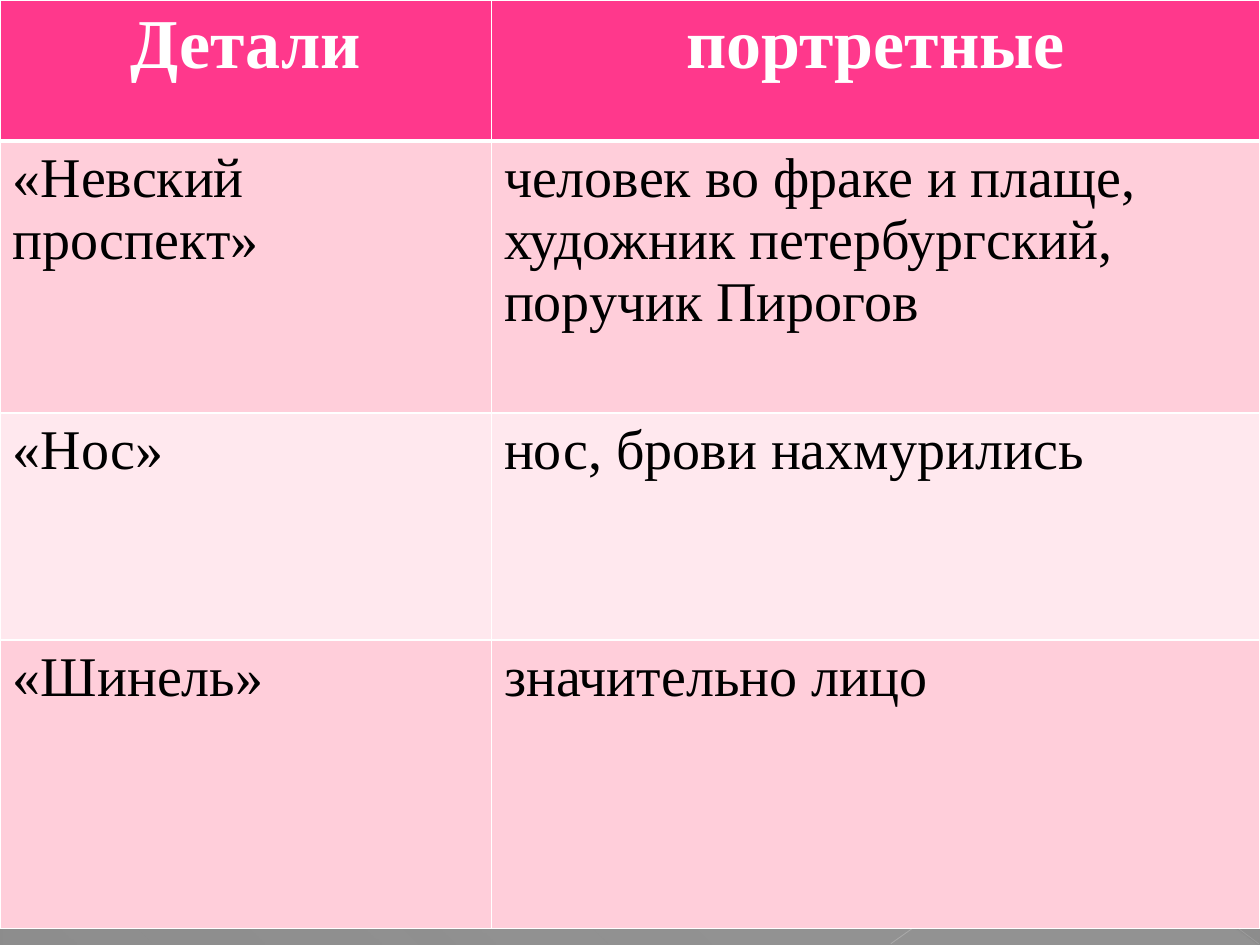
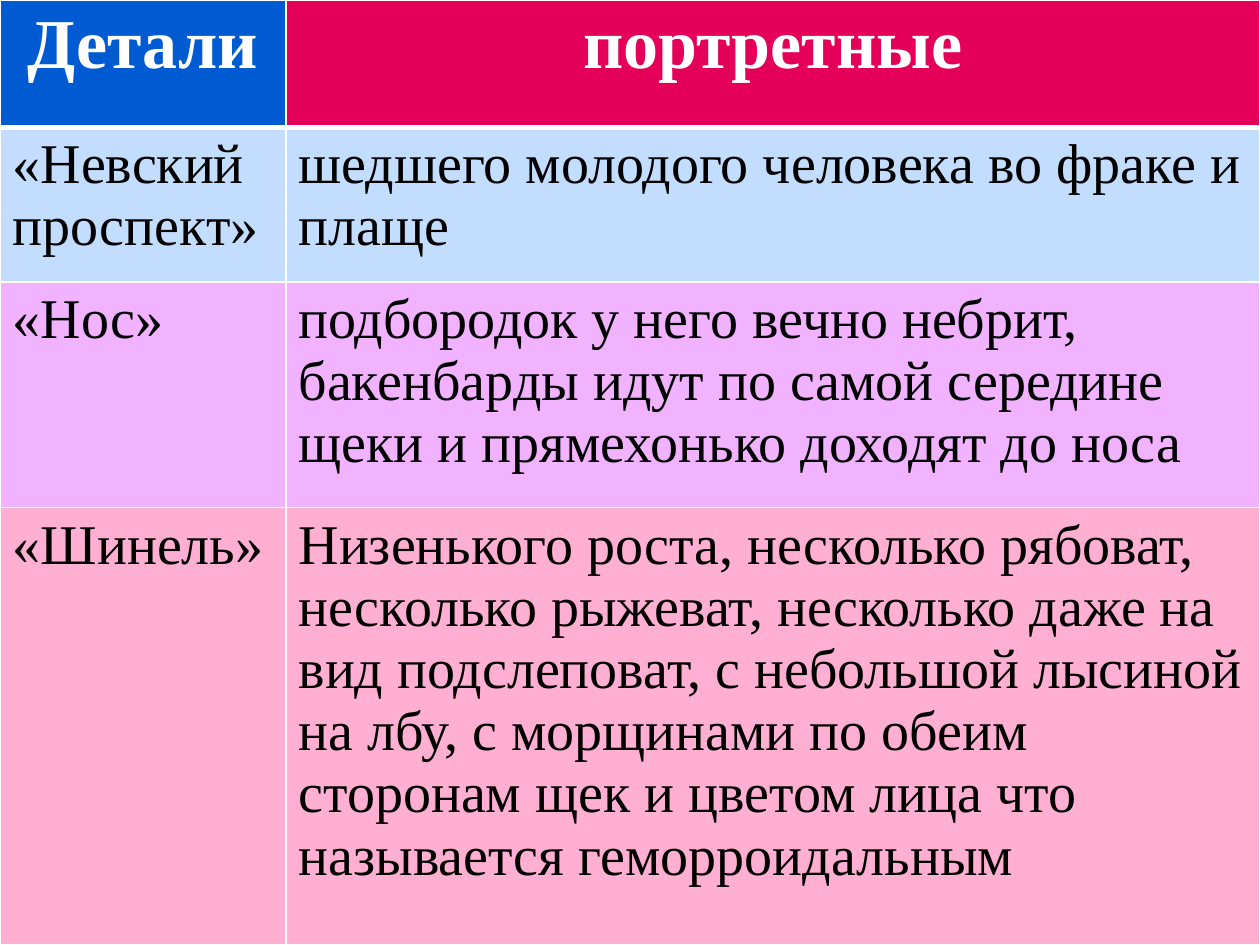
from dataclasses import dataclass

from pptx import Presentation
from pptx import util as u
from pptx.dml import color
from pptx.enum import shapes, text
from pptx.oxml import ns, parse_xml

PX = 9144
WIDTH, HEIGHT = 1000, 750
WHITE, BLACK = "FFFFFF", "000000"
FONT = "Times New Roman"


@dataclass(frozen=True)
class Stop:
    place: int
    hex_color: str
    opacity: int = 100


@dataclass(frozen=True)
class Ray:
    start: tuple[int, int]
    end: tuple[int, int]
    hex_color: str
    points: float
    opacity: int


@dataclass(frozen=True)
class Row:
    height: int
    texts: tuple[str, str]
    fills: tuple[str, str]


@dataclass(frozen=True)
class Details:
    columns: tuple[int, int]
    rows: tuple[Row, ...]


BACKGROUND = (Stop(0, "4A4A4A"), Stop(60, "626262"), Stop(100, "8C8C8C"))
SHEEN = (Stop(0, "D2D2D2", 10), Stop(70, "D2D2D2", 8), Stop(100, "D2D2D2", 1))
RAYS = (
    Ray((0, 1), (999, 749), "BFBFBF", 0.39, 35),
    Ray((1000, 541), (707, 749), "C6C6C6", 0.47, 45),
)
HEADINGS = ("Детали", "портретные")
NEVSKY, NOSE, OVERCOAT = "«Невский проспект»", "«Нос»", "«Шинель»"

SLIDES = (
    Details((390, 610), (
        Row(112, HEADINGS, ("FF388C",) * 2),
        Row(216, (NEVSKY, "человек во фраке и плаще, художник петербургский, поручик Пирогов"),
            ("FFCEDA",) * 2),
        Row(180, (NOSE, "нос, брови нахмурились"), ("FFE8EE",) * 2),
        Row(229, (OVERCOAT, "значительно лицо"), ("FFCEDA",) * 2),
    )),
    Details((227, 773), (
        Row(101, HEADINGS, ("005BD3", "E40059")),
        Row(123, (NEVSKY, "шедшего молодого человека во фраке и плаще"), ("C3DDFF",) * 2),
        Row(179, (NOSE, "подбородок у него вечно небрит, бакенбарды идут по самой середине "
                        "щеки и прямехонько доходят до носа"), ("F1B2FF",) * 2),
        Row(347, (OVERCOAT, "Низенького роста, несколько рябоват, несколько рыжеват, несколько "
                            "даже на вид подслеповат, с небольшой лысиной на лбу, с морщинами "
                            "по обеим сторонам щек и цветом лица что называется "
                            "геморроидальным"), ("FFAFD1",) * 2),
    )),
)


def px(length: int) -> u.Emu:
    return u.Emu(length * PX)


def rgb(hex_color: str) -> color.RGBColor:
    return color.RGBColor.from_string(hex_color)


def xml(markup: str):
    head, rest = markup.split(" ", 1)
    return parse_xml(f'{head} {ns.nsdecls("a")} {rest}')


def paint_gradient(owner, fill, stops: tuple[Stop, ...], angle: int) -> None:
    fill.gradient()
    gradient = owner.element.find(f".//{ns.qn('a:gradFill')}")
    for child in list(gradient):
        gradient.remove(child)
    marks = "".join(
        f'<a:gs pos="{stop.place * 1000}"><a:srgbClr val="{stop.hex_color}">'
        f'<a:alpha val="{stop.opacity * 1000}"/></a:srgbClr></a:gs>'
        for stop in stops
    )
    gradient.append(xml(f"<a:gsLst >{marks}</a:gsLst>"))
    gradient.append(xml(f'<a:lin ang="{angle * 60000}" scaled="0"/>'))


def draw_ray(slide, ray: Ray) -> None:
    line = slide.shapes.add_connector(
        shapes.MSO_CONNECTOR.STRAIGHT, *map(px, ray.start + ray.end))
    line.line.width = u.Pt(ray.points)
    line.line.color.rgb = rgb(ray.hex_color)
    tint = line.element.spPr.find(f".//{ns.qn('a:srgbClr')}")
    tint.append(xml(f'<a:alpha val="{ray.opacity * 1000}"/>'))
    line.element.spPr.append(xml("<a:effectLst />"))


def draw_backdrop(slide) -> None:
    paint_gradient(slide, slide.background.fill, BACKGROUND, 90)
    sheen = slide.shapes.add_shape(
        shapes.MSO_SHAPE.RIGHT_TRIANGLE, px(1), px(2), px(998), px(748))
    sheen.shadow.inherit = False
    sheen.line.fill.background()
    paint_gradient(sheen, sheen.fill, SHEEN, 133)
    for ray in RAYS:
        draw_ray(slide, ray)


def border_cell(cell, bottom: int, top: int) -> None:
    properties = cell._tc.get_or_add_tcPr()
    for place, (side, points) in enumerate(
            {"lnL": 1, "lnR": 1, "lnT": top, "lnB": bottom}.items()):
        properties.insert(place, xml(
            f'<a:{side} w="{u.Pt(points)}"><a:solidFill><a:srgbClr val="{WHITE}"/>'
            f'</a:solidFill></a:{side}>'))


def fill_cell(cell, words: str, hex_color: str, row_number: int) -> None:
    heading = row_number == 0
    cell.fill.solid()
    cell.fill.fore_color.rgb = rgb(hex_color)
    border_cell(cell, bottom=3 if heading else 1, top=3 if row_number == 1 else 1)
    paragraph = cell.text_frame.paragraphs[0]
    paragraph.alignment = text.PP_ALIGN.CENTER if heading else text.PP_ALIGN.LEFT
    run = paragraph.add_run()
    run.text = words
    font_format = {"name": FONT, "size": u.Pt(40 if heading else 32), "bold": heading}
    for attribute, value in font_format.items():
        setattr(run.font, attribute, value)
    run.font.color.rgb = rgb(WHITE if heading else BLACK)


def draw_details(slide, details: Details) -> None:
    height = sum(row.height for row in details.rows)
    table = slide.shapes.add_table(
        len(details.rows), len(details.columns), 0, 0, px(WIDTH), px(height)).table
    for column, width in zip(table.columns, details.columns):
        column.width = px(width)
    for row_number, row in enumerate(details.rows):
        table.rows[row_number].height = px(row.height)
        for column_number, (words, hex_color) in enumerate(zip(row.texts, row.fills)):
            fill_cell(table.cell(row_number, column_number), words, hex_color, row_number)


def main() -> None:
    deck = Presentation()
    deck.slide_width, deck.slide_height = px(WIDTH), px(HEIGHT)
    for details in SLIDES:
        slide = deck.slides.add_slide(deck.slide_layouts[6])
        draw_backdrop(slide)
        draw_details(slide, details)
    deck.save("out.pptx")


if __name__ == "__main__":
    main()
